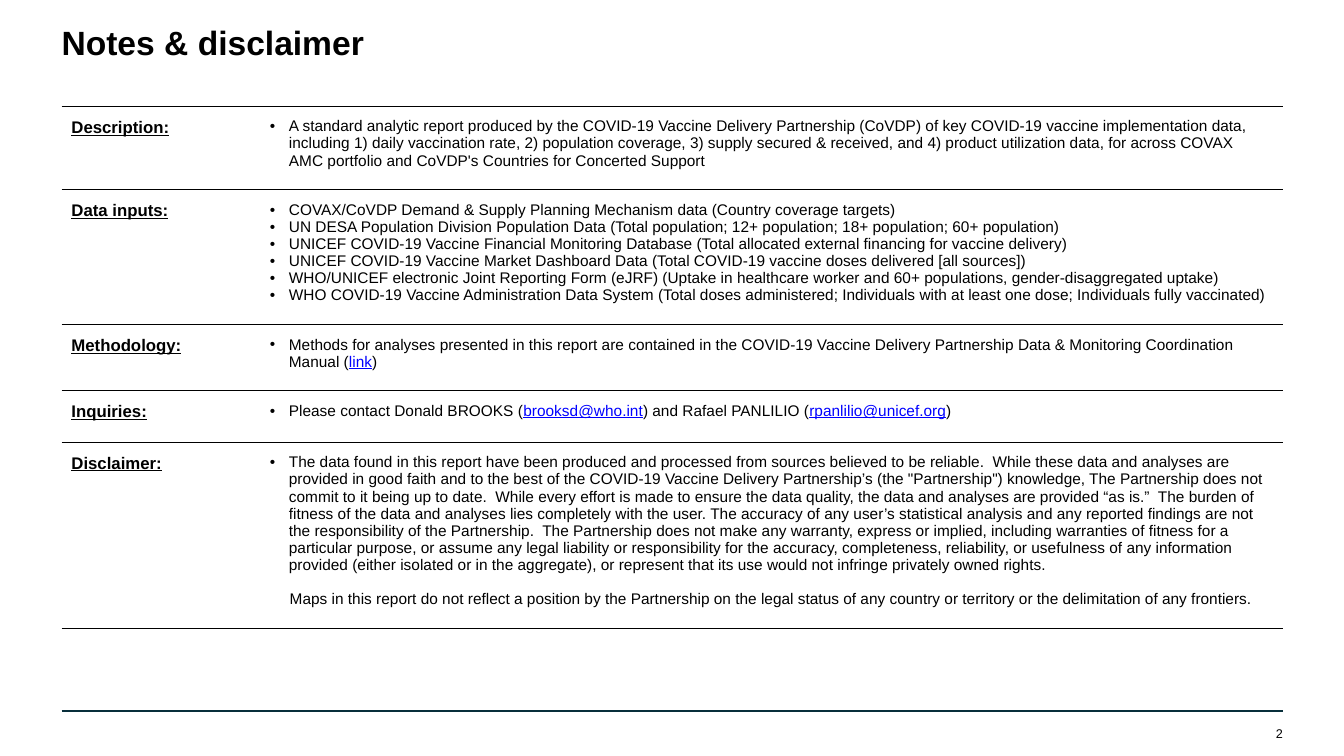
from lxml import etree
from pptx import Presentation
from pptx.dml.color import RGBColor
from pptx.enum.shapes import MSO_CONNECTOR
from pptx.enum.text import MSO_ANCHOR, MSO_AUTO_SIZE, PP_ALIGN
from pptx.oxml.ns import qn
from pptx.util import Cm, Pt

TITLE = "Notes & disclaimer"
PAGE_NUMBER = "2"
LINK_MARK = "|"
DISCLAIMER = [
    "The data found in this report have been produced and processed from sources believed to be reliable. ",
    "While these data and analyses are provided in good faith and to the best of the COVID-19 Vaccine Delivery "
    "Partnership’s (the \"Partnership\") knowledge, The Partnership does not commit to it being up to date. ",
    "While every effort is made to ensure the data quality, the data and analyses are provided “as is.” ",
    "The burden of fitness of the data and analyses lies completely with the user.",
    "The accuracy of any user’s statistical analysis and any reported findings are not the responsibility of the "
    "Partnership. ",
    "The Partnership does not make any warranty, express or implied, including warranties of fitness for a "
    "particular purpose, or assume any legal liability or responsibility for the accuracy, completeness, "
    "reliability, or usefulness of any information provided (either isolated or in the aggregate), or represent "
    "that its use would not infringe privately owned rights.",
]
SECTIONS = [
    ("Description:", 2.1, [
        "A standard analytic report produced by the COVID-19 Vaccine Delivery Partnership (CoVDP) of key COVID-19 "
        "vaccine implementation data, including 1) daily vaccination rate, 2) population coverage, 3) supply secured "
        "& received, and 4) product utilization data, for across COVAX AMC portfolio and CoVDP's Countries for "
        "Concerted Support",
    ], None),
    ("Data inputs:", 3.4, [
        "COVAX/CoVDP Demand & Supply Planning Mechanism data (Country coverage targets)",
        "UN DESA Population Division Population Data (Total population; 12+ population; 18+ population; "
        "60+ population)",
        "UNICEF COVID-19 Vaccine Financial Monitoring Database (Total allocated external financing for vaccine "
        "delivery)",
        "UNICEF COVID-19 Vaccine Market Dashboard Data (Total COVID-19 vaccine doses delivered [all sources])",
        "WHO/UNICEF electronic Joint Reporting Form (eJRF) (Uptake in healthcare worker and 60+ populations, "
        "gender-disaggregated uptake)",
        "WHO COVID-19 Vaccine Administration Data System (Total doses administered; Individuals with at least one "
        "dose; Individuals fully vaccinated)",
    ], None),
    ("Methodology:", 1.65, [
        "Methods for analyses presented in this report are contained in the COVID-19 Vaccine Delivery Partnership "
        "Data & Monitoring Coordination Manual (|link|)",
    ], None),
    ("Inquiries:", 1.3, [
        "Please contact Donald BROOKS (|brooksd@who.int|) and Rafael PANLILIO (|rpanlilio@unicef.org|)",
    ], None),
    ("Disclaimer:", 4.7, [" ".join(DISCLAIMER)],
     "Maps in this report do not reflect a position by the Partnership on the legal status of any country or "
     "territory or the delimitation of any frontiers."),
]

BLACK = RGBColor(0x00, 0x00, 0x00)
LINK_BLUE = RGBColor(0x00, 0x00, 0xFF)
RULE_TEAL = RGBColor(0x08, 0x2F, 0x3B)
FONT = "Arial"
LEFT, WIDTH = Cm(1.55), Cm(30.78)
LABEL_WIDTH = Cm(5)
INDENT = Cm(0.48)
NUMBER_WIDTH = Cm(0.92)
TOP, MIDDLE = MSO_ANCHOR.TOP, MSO_ANCHOR.MIDDLE
ALIGN_LEFT, ALIGN_RIGHT = PP_ALIGN.LEFT, PP_ALIGN.RIGHT
NO_AUTOFIT = MSO_AUTO_SIZE.NONE
STRAIGHT = MSO_CONNECTOR.STRAIGHT


def write(p, text, size=11, bold=False, underline=False, align=ALIGN_LEFT, indent=0, bullet=False, before=0):
    pPr = p._p.get_or_add_pPr()
    if indent:
        pPr.set("marL", str(indent))
        pPr.set("indent", str(-indent if bullet else 0))
    if bullet:
        etree.SubElement(pPr, qn("a:buFont"), typeface=FONT)
        etree.SubElement(pPr, qn("a:buChar"), char="•")
    p.alignment = align
    if before:
        p.space_before = Pt(before)
    for i, part in enumerate(text.split(LINK_MARK)):
        is_link = i % 2 == 1
        r = p.add_run()
        r.text = part
        r.font.name, r.font.size, r.font.bold = FONT, Pt(size), bold
        r.font.underline = underline or is_link
        r.font.color.rgb = LINK_BLUE if is_link else BLACK


def set_frame(tf, anchor):
    tf.margin_left = tf.margin_right = tf.margin_top = tf.margin_bottom = 0
    tf.word_wrap = True
    tf.auto_size = NO_AUTOFIT
    tf.vertical_anchor = anchor


def format_cell(cell):
    cell.margin_left = cell.margin_right = Cm(0.25)
    cell.margin_top, cell.margin_bottom = Cm(0.3), Cm(0.5)
    cell.vertical_anchor = TOP
    cell.fill.background()
    tcPr = cell._tc.get_or_add_tcPr()
    for i, side in enumerate("LRTB"):
        ln = etree.Element(qn(f"a:ln{side}"), w=str(Pt(0.5)))
        if side in "TB":
            fill = etree.SubElement(ln, qn("a:solidFill"))
            etree.SubElement(fill, qn("a:srgbClr"), val=str(BLACK))
        else:
            etree.SubElement(ln, qn("a:noFill"))
        tcPr.insert(i, ln)


def add_sections(slide):
    height = Cm(sum(section[1] for section in SECTIONS))
    table = slide.shapes.add_table(len(SECTIONS), 2, LEFT, Cm(2.67), WIDTH, height).table
    table.first_row = table.horz_banding = False
    table.columns[0].width = LABEL_WIDTH
    table.columns[1].width = WIDTH - LABEL_WIDTH
    for row, (label, row_height, items, closing) in zip(table.rows, SECTIONS):
        row.height = Cm(row_height)
        label_cell, body_cell = row.cells
        format_cell(label_cell)
        format_cell(body_cell)
        write(label_cell.text_frame.paragraphs[0], label, size=12, bold=True, underline=True)
        tf = body_cell.text_frame
        for i, item in enumerate(items):
            p = tf.add_paragraph() if i else tf.paragraphs[0]
            write(p, item, indent=INDENT, bullet=True)
        if closing:
            write(tf.add_paragraph(), closing, indent=Cm(0.5), before=12.3)


def main():
    prs = Presentation()
    prs.slide_width, prs.slide_height = Cm(33.87), Cm(19.05)
    slide = prs.slides.add_slide(prs.slide_layouts[5])

    title = slide.shapes.title
    title.left, title.top, title.width, title.height = LEFT, Cm(0.56), WIDTH, Cm(1.02)
    set_frame(title.text_frame, TOP)
    write(title.text_frame.paragraphs[0], TITLE, size=24, bold=True)

    add_sections(slide)

    rule_y = Cm(17.91)
    rule = slide.shapes.add_connector(STRAIGHT, LEFT, rule_y, LEFT + WIDTH, rule_y)
    rule.line.color.rgb = RULE_TEAL
    rule.line.width = Pt(1.5)
    etree.SubElement(rule._element.spPr, qn("a:effectLst"))

    number = slide.shapes.add_textbox(LEFT + WIDTH - NUMBER_WIDTH, Cm(18.29), NUMBER_WIDTH, Cm(0.38))
    set_frame(number.text_frame, MIDDLE)
    write(number.text_frame.paragraphs[0], PAGE_NUMBER, size=9, align=ALIGN_RIGHT)

    prs.save("out.pptx")


if __name__ == "__main__":
    main()
